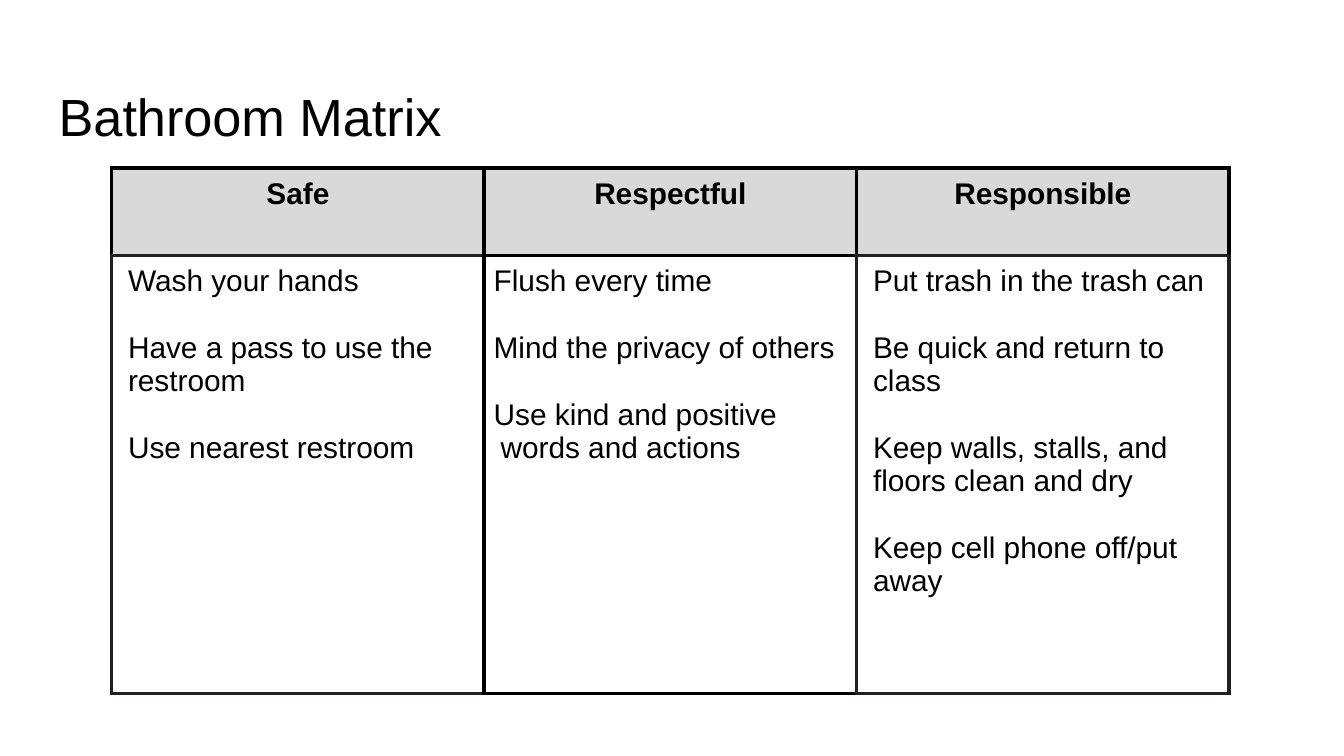
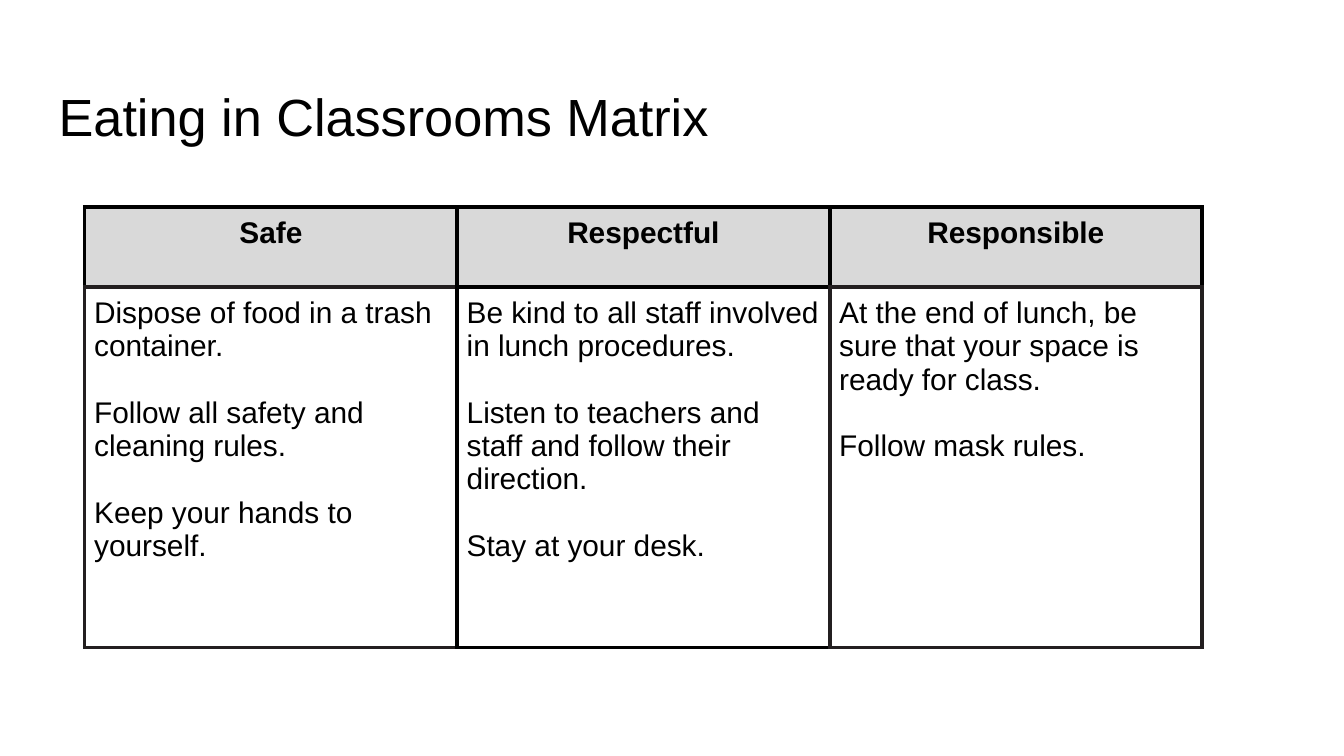
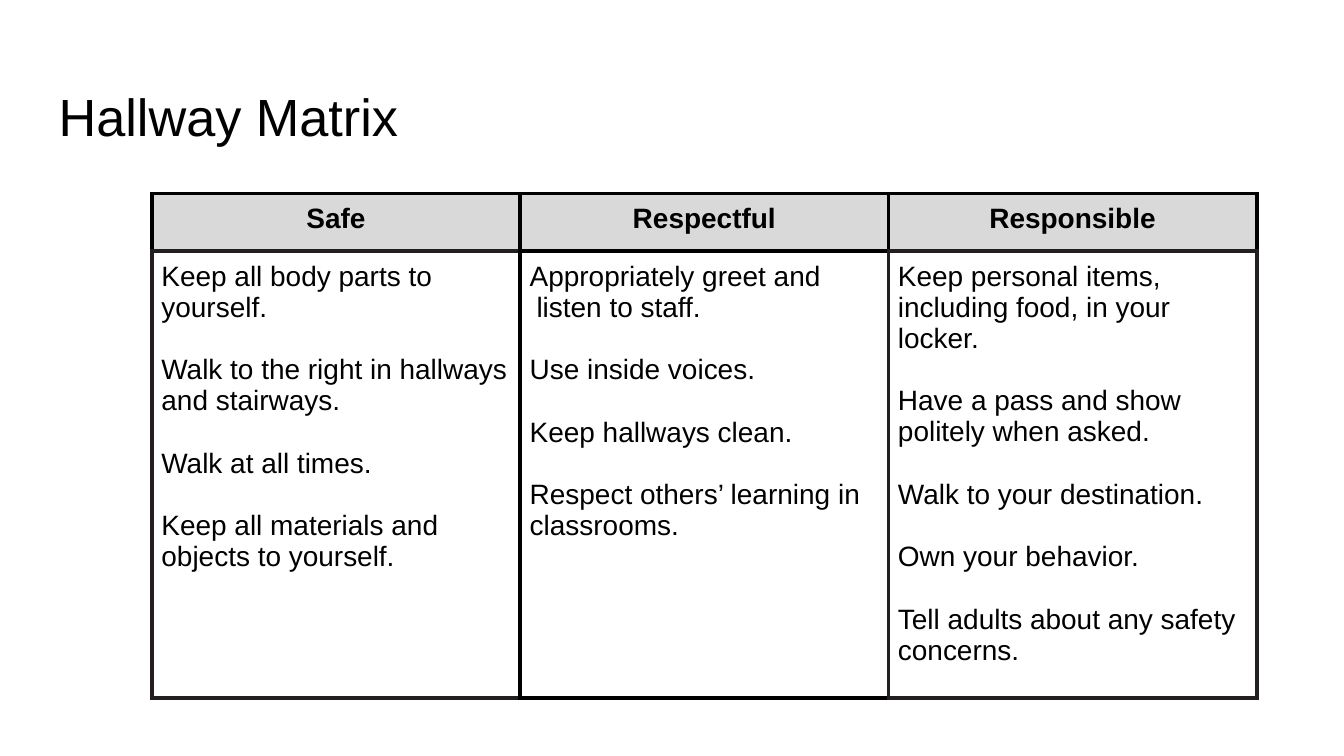
import pptx
import pptx.dml.color
import pptx.enum.text
import pptx.oxml
import pptx.oxml.ns
import pptx.util

Cm, Pt = pptx.util.Cm, pptx.util.Pt
ALIGN = pptx.enum.text.PP_ALIGN

HUES = {"ink": "000000", "edge": "231F20", "head": "D9D9D9", "page": "FFFFFF"}
FONT = "Arial"
LEAD = 1.12  # line height as a share of the font size
PAD = 0.18
RULE = 2.25

HEADS = ["Safe", "Respectful", "Responsible"]

# Border colours in the order left, right, top, bottom
SIDES = ["lnL", "lnR", "lnT", "lnB"]
TOPS = [["ink", "ink", "ink", "edge"], ["ink"] * 4, ["ink", "ink", "ink", "edge"]]
BODIES = [["edge", "ink", "edge", "edge"], ["ink", "edge", "ink", "ink"], ["edge"] * 4]

# Paragraph left margin and first-line indent
FLUSH, INSET, HANG = (0, 0), (0.13, 0), (0.13, -0.13)

PAGES = [
    {
        "title": "Bathroom Matrix",
        "box": (2.11, 3.18, 21.12, 9.93), "top": 1.65, "size": 16,
        "dents": [INSET, HANG, INSET],
        "cols": [
            ["Wash your hands", "Have a pass to use the restroom",
             "Use nearest restroom"],
            ["Flush every time", "Mind the privacy of others",
             "Use kind and positive words and actions"],
            ["Put trash in the trash can", "Be quick and return to class",
             "Keep walls, stalls, and floors clean and dry",
             "Keep cell phone off/put away"],
        ],
    },
    {
        "title": "Eating in Classrooms Matrix",
        "box": (1.6, 3.91, 21.12, 8.33), "top": 1.52, "size": 16,
        "dents": [FLUSH, FLUSH, FLUSH],
        "cols": [
            ["Dispose of food in a trash container.",
             "Follow all safety and cleaning rules.",
             "Keep your hands to yourself."],
            ["Be kind to all staff involved in lunch procedures.",
             "Listen to teachers and staff and follow their direction.",
             "Stay at your desk."],
            ["At the end of lunch, be sure that your space is ready for class.",
             "Follow mask rules."],
        ],
    },
    {
        "title": "Hallway Matrix",
        "box": (2.87, 3.66, 20.88, 9.14), "top": 1.09, "size": 15,
        "dents": [FLUSH, HANG, FLUSH],
        "cols": [
            ["Keep all body parts to yourself.",
             "Walk to the right in hallways and stairways.",
             "Walk at all times.",
             "Keep all materials and objects to yourself."],
            ["Appropriately greet and listen to staff.", "Use inside voices.",
             "Keep hallways clean.",
             ("Respect others’ learning in classrooms.", FLUSH)],
            ["Keep personal items, including food, in your locker.",
             "Have a pass and show politely when asked.",
             "Walk to your destination.", "Own your behavior.",
             "Tell adults about any safety concerns."],
        ],
    },
]


def hue(name):
    return pptx.dml.color.RGBColor.from_string(HUES[name])


def write(para, text, size=16, bold=False, align=ALIGN.LEFT, dent=FLUSH, gap=0):
    """Fill one paragraph with formatted text."""
    props = para._p.get_or_add_pPr()
    for key, val in zip(("marL", "indent"), dent):
        props.set(key, str(int(Cm(val))))
    para.alignment = align
    para.space_before = Pt(gap)
    run = para.add_run()
    run.text = text
    run.font.name = FONT
    run.font.size = Pt(size)
    run.font.bold = bold
    run.font.color.rgb = hue("ink")


def edge(cell, names):
    """Draw the four borders of a cell."""
    props = cell._tc.get_or_add_tcPr()
    space = pptx.oxml.ns.nsdecls("a")
    for spot, (side, name) in enumerate(zip(SIDES, names)):
        line = pptx.oxml.parse_xml(
            f'<a:{side} {space} w="{int(Pt(RULE))}"><a:solidFill>'
            f'<a:srgbClr val="{HUES[name]}"/></a:solidFill></a:{side}>')
        props.insert(spot, line)


def dress(cell, names, fill=None):
    """Set the padding, fill and borders of a cell."""
    cell.margin_left = cell.margin_right = Cm(PAD)
    cell.margin_top = cell.margin_bottom = Cm(PAD)
    if fill:
        cell.fill.solid()
        cell.fill.fore_color.rgb = hue(fill)
    else:
        cell.fill.background()
    edge(cell, names)


def title(slide, text, box):
    frame = slide.shapes.add_textbox(*map(Cm, box)).text_frame
    frame.word_wrap = True
    frame.margin_left = frame.margin_right = Cm(0.25)
    frame.margin_top, frame.margin_bottom = Cm(0.35), Cm(0.15)
    write(frame.paragraphs[0], text, size=28)


def matrix(slide, page, box):
    """Place a table with one header row and one tall row of rules."""
    table = slide.shapes.add_table(2, len(HEADS), *map(Cm, box)).table
    table.first_row = table.horz_banding = False
    for col in table.columns:
        col.width = Cm(box[2] / len(HEADS))
    table.rows[0].height = Cm(page["top"])
    table.rows[1].height = Cm(box[3] - page["top"])
    size = page["size"]

    for col, head in enumerate(HEADS):
        # Header
        cell = table.cell(0, col)
        dress(cell, TOPS[col], fill="head")
        write(cell.text_frame.paragraphs[0], head, size=size, bold=True,
              align=ALIGN.CENTER)
        # Rules, one line apart
        cell = table.cell(1, col)
        dress(cell, BODIES[col])
        frame = cell.text_frame
        for row, rule in enumerate(page["cols"][col]):
            para = frame.add_paragraph() if row else frame.paragraphs[0]
            text, dent = (rule, page["dents"][col]) if isinstance(rule, str) else rule
            write(para, text, size=size, dent=dent, gap=size * LEAD if row else 0)


def main():
    deck = pptx.Presentation()
    deck.slide_width, deck.slide_height = Cm(25.4), Cm(14.29)
    for page in PAGES:
        slide = deck.slides.add_slide(deck.slide_layouts[6])
        slide.background.fill.solid()
        slide.background.fill.fore_color.rgb = hue("page")
        title(slide, page["title"], (0.86, 1.24, 23.67, 1.6))
        matrix(slide, page, page["box"])
    deck.save("out.pptx")


if __name__ == "__main__":
    main()
